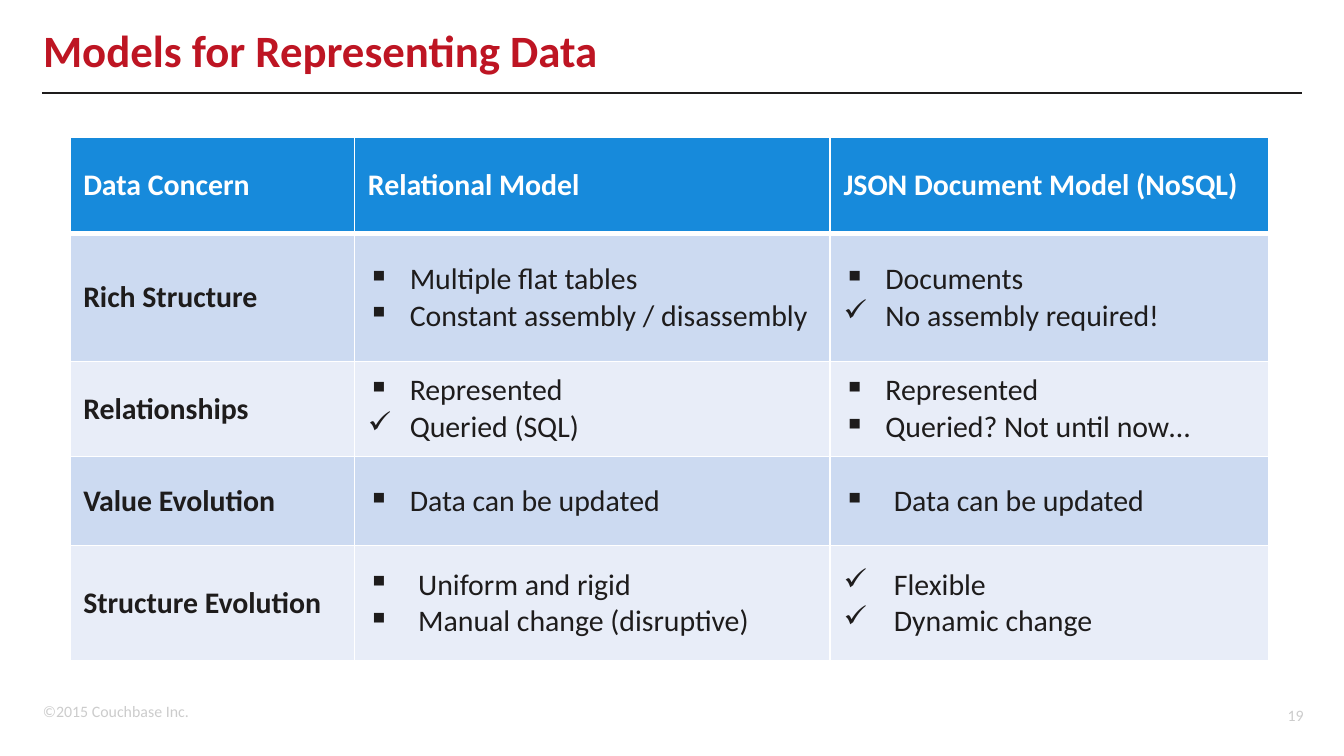
from lxml.etree import SubElement
from pptx import Presentation
from pptx.dml.color import RGBColor
from pptx.enum.shapes import MSO_CONNECTOR
from pptx.enum.text import MSO_ANCHOR, PP_ALIGN
from pptx.oxml.ns import qn
from pptx.util import Cm, Pt

RED = RGBColor(0xBE, 0x15, 0x23)
BLACK = RGBColor(0x1E, 0x1C, 0x1C)
WHITE = RGBColor(0xFF, 0xFF, 0xFF)
GRAY = RGBColor(0xCC, 0xCC, 0xCC)
BLUE = RGBColor(0x17, 0x8A, 0xDB)
BAND_DARK = RGBColor(0xCC, 0xDA, 0xF1)
BAND_LIGHT = RGBColor(0xE8, 0xED, 0xF8)

FONT = "Calibri"
SQUARE, CHECK = "▪", "✓"
NARROW, WIDE = Cm(0.79), Cm(0.95)
COLUMN_WIDTHS = [5.38, 8.99, 8.28]
ROW_HEIGHTS = [1.83, 2.41, 1.8, 1.68, 2.18]
HEADINGS = ["Data Concern", "Relational Model", "JSON Document Model (NoSQL)"]
CONCERNS = [
    ("Rich Structure",
     (NARROW, [(SQUARE, "Multiple flat tables"), (SQUARE, "Constant assembly / disassembly")]),
     (NARROW, [(SQUARE, "Documents"), (CHECK, "No assembly required!")])),
    ("Relationships",
     (NARROW, [(SQUARE, "Represented"), (CHECK, "Queried (SQL)")]),
     (NARROW, [(SQUARE, "Represented"), (SQUARE, "Queried? Not until now…")])),
    ("Value Evolution",
     (NARROW, [(SQUARE, "Data can be updated")]),
     (WIDE, [(SQUARE, "Data can be updated")])),
    ("Structure Evolution",
     (WIDE, [(SQUARE, "Uniform and rigid"), (SQUARE, "Manual change (disruptive)")]),
     (WIDE, [(CHECK, "Flexible"), (CHECK, "Dynamic change")])),
]


def format_runs(paragraph, size, color, bold=False):
    """Apply the slide font to every run of a paragraph."""
    for run in paragraph.runs:
        run.font.name = FONT
        run.font.size = Pt(size)
        run.font.bold = bold
        run.font.color.rgb = color


def set_title(slide, text):
    """Place and format the title placeholder."""
    title = slide.shapes.title
    title.left, title.top, title.width, title.height = Cm(0.56), Cm(0.28), Cm(22.23), Cm(1.5)
    text_frame = title.text_frame
    text_frame.text = text
    text_frame.vertical_anchor = MSO_ANCHOR.MIDDLE
    paragraph = text_frame.paragraphs[0]
    paragraph.alignment = PP_ALIGN.LEFT
    paragraph.line_spacing = 0.8
    format_runs(paragraph, 24, RED, True)


def add_rule(slide):
    """Draw the line below the title."""
    rule = slide.shapes.add_connector(MSO_CONNECTOR.STRAIGHT, Cm(0.79), Cm(1.75), Cm(24.61), Cm(1.75))
    rule.line.color.rgb = BLACK
    rule.line.width = Pt(1)
    SubElement(rule.line._get_or_add_ln().getparent(), qn("a:effectLst"))


def add_footer_text(slide, text, left, width, height, alignment, anchor, wrap):
    """Add one small gray text at the foot of the slide."""
    box = slide.shapes.add_textbox(Cm(left), Cm(13.13), Cm(width), Cm(height))
    text_frame = box.text_frame
    text_frame.text = text
    text_frame.word_wrap = wrap
    text_frame.vertical_anchor = anchor
    paragraph = text_frame.paragraphs[0]
    paragraph.alignment = alignment
    format_runs(paragraph, 8.5, GRAY)


def style_cell(cell, fill, bottom_width=1):
    """Give a cell white borders, a fill and middle anchoring."""
    properties = cell._tc.get_or_add_tcPr()
    for side, width in (("L", 1), ("R", 1), ("T", 1), ("B", bottom_width)):
        border = SubElement(properties, qn(f"a:ln{side}"), w=str(Pt(width)))
        SubElement(SubElement(border, qn("a:solidFill")), qn("a:srgbClr"), val=str(WHITE))
    cell.fill.solid()
    cell.fill.fore_color.rgb = fill
    cell.vertical_anchor = MSO_ANCHOR.MIDDLE


def write_label(cell, text, color):
    """Write a bold heading into a cell."""
    cell.text_frame.text = text
    format_runs(cell.text_frame.paragraphs[0], 16, color, True)


def write_bullets(cell, indent, items):
    """Write bulleted items into a cell."""
    cell.text_frame.text = "\n".join(text for _, text in items)
    for paragraph, (bullet, _) in zip(cell.text_frame.paragraphs, items):
        properties = paragraph._p.get_or_add_pPr()
        properties.set("marL", str(indent))
        properties.set("indent", str(-indent))
        SubElement(properties, qn("a:buChar"), char=bullet)
        format_runs(paragraph, 16, BLACK)


def add_comparison_table(slide):
    """Add the table that compares the two data models."""
    frame = slide.shapes.add_table(
        len(ROW_HEIGHTS), len(COLUMN_WIDTHS), Cm(1.32), Cm(2.59),
        Cm(sum(COLUMN_WIDTHS)), Cm(sum(ROW_HEIGHTS)))
    table = frame.table
    for column, width in zip(table.columns, COLUMN_WIDTHS):
        column.width = Cm(width)
    for row, height in zip(table.rows, ROW_HEIGHTS):
        row.height = Cm(height)
    for cell, heading in zip(table.rows[0].cells, HEADINGS):
        style_cell(cell, BLUE, 3)
        write_label(cell, heading, WHITE)
    for index, (concern, *models) in enumerate(CONCERNS):
        label_cell, *model_cells = table.rows[index + 1].cells
        fill = BAND_LIGHT if index % 2 else BAND_DARK
        style_cell(label_cell, fill)
        write_label(label_cell, concern, BLACK)
        for cell, (indent, items) in zip(model_cells, models):
            style_cell(cell, fill)
            write_bullets(cell, indent, items)


def main():
    """Build and save the slide."""
    presentation = Presentation()
    presentation.slide_width, presentation.slide_height = Cm(25.4), Cm(14.29)
    slide = presentation.slides.add_slide(presentation.slide_layouts[5])
    add_footer_text(slide, "©2015 Couchbase Inc.", 0.56, 3.28, 0.61, PP_ALIGN.LEFT, MSO_ANCHOR.TOP, False)
    add_footer_text(slide, "19", 22.83, 2.06, 0.76, PP_ALIGN.RIGHT, MSO_ANCHOR.MIDDLE, True)
    add_rule(slide)
    set_title(slide, "Models for Representing Data")
    add_comparison_table(slide)
    presentation.save("out.pptx")


if __name__ == "__main__":
    main()
